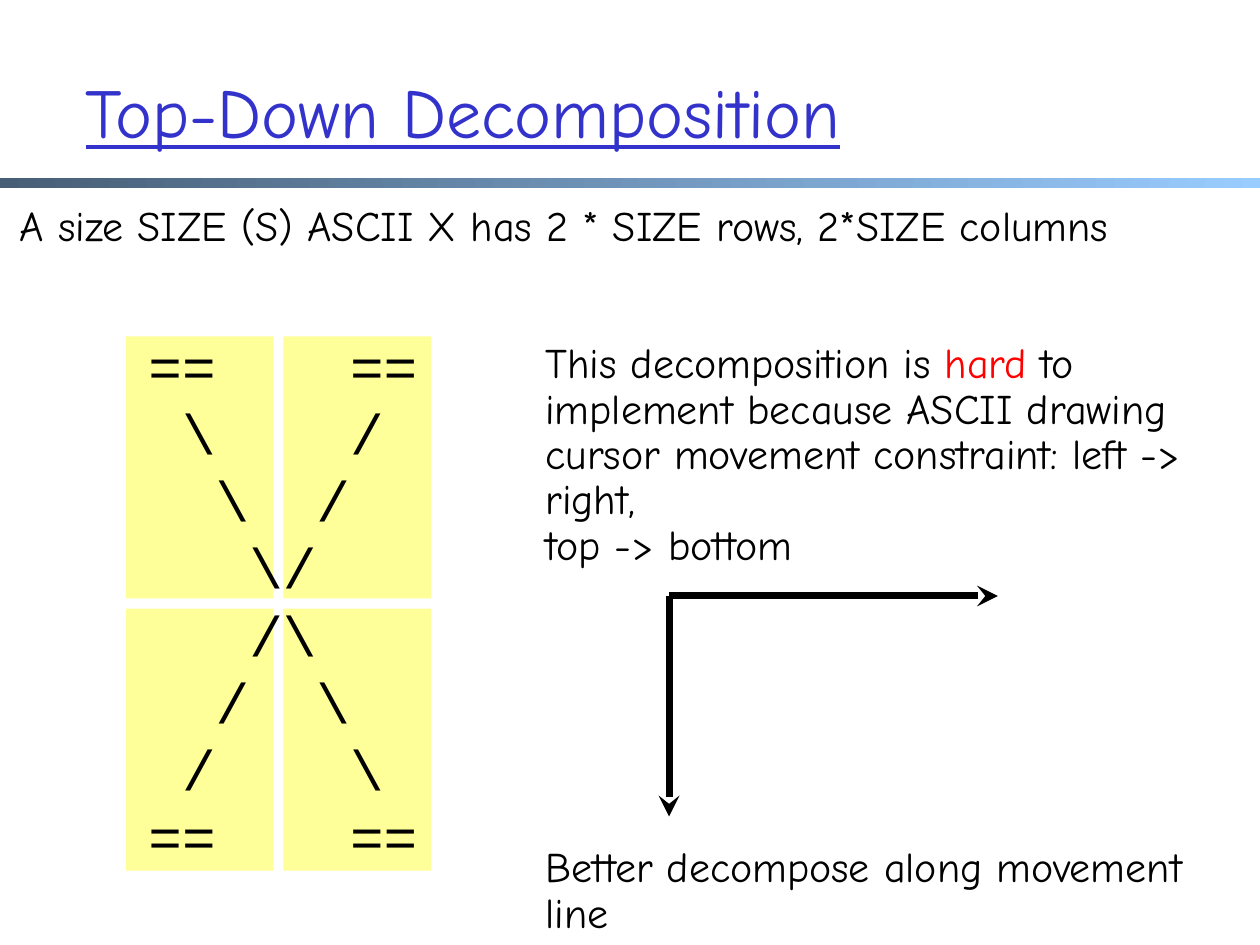
from dataclasses import dataclass
from lxml import etree
from pptx import Presentation
from pptx.dml.color import RGBColor
from pptx.enum import shapes, text
from pptx.oxml import ns
from pptx.util import Inches, Pt


@dataclass(frozen=True)
class Theme:
    sans: str = "Comic Neue"
    mono: str = "Courier New"
    ink: str = "000000"
    title: str = "3333CC"
    alert: str = "FF0000"
    tile: str = "FFFF99"
    bar: tuple = ("475E76", "99CCFF")
    head: int = 40
    art: int = 32
    body: int = 24
    line: int = 4


class Deck:
    def __init__(self, theme):
        self.theme = theme
        self.file = Presentation()
        self.file.slide_width = Inches(10)
        self.file.slide_height = Inches(7.5)
        self.slide = self.file.slides.add_slide(self.file.slide_layouts[5])

    def font(self, item, name, size, color):
        item.font.name = name
        item.font.size = Pt(size)
        item.font.color.rgb = RGBColor.from_string(color)

    def title(self, words, box):
        shape = self.slide.shapes.title
        shape.left, shape.top, shape.width, shape.height = map(Inches, box)
        frame = shape.text_frame
        frame.text = words
        frame.vertical_anchor = text.MSO_ANCHOR.MIDDLE
        para = frame.paragraphs[0]
        para.alignment = text.PP_ALIGN.LEFT
        self.font(para, self.theme.sans, self.theme.head, self.theme.title)
        para.font.underline = True

    def rect(self, box):
        shape = self.slide.shapes.add_shape(shapes.MSO_SHAPE.RECTANGLE, *map(Inches, box))
        shape.shadow.inherit = False
        shape.line.fill.background()
        return shape

    def bar(self, box):
        fill = self.rect(box).fill
        fill.gradient()
        fill.gradient_angle = 0
        for stop, color in zip(fill.gradient_stops, self.theme.bar):
            stop.color.rgb = RGBColor.from_string(color)

    def tile(self, box):
        fill = self.rect(box).fill
        fill.solid()
        fill.fore_color.rgb = RGBColor.from_string(self.theme.tile)

    def frame(self, box, wrap=True, group=None):
        place = (group or self.slide).shapes
        frame = place.add_textbox(*map(Inches, box)).text_frame
        frame.word_wrap = wrap
        frame.auto_size = text.MSO_AUTO_SIZE.SHAPE_TO_FIT_TEXT
        return frame

    def indent(self, para, left, first):
        props = para._p.get_or_add_pPr()
        props.set("marL", str(Inches(left)))
        props.set("indent", str(Inches(first)))

    def note(self, parts, box, wrap=True, group=None):
        para = self.frame(box, wrap, group).paragraphs[0]
        self.indent(para, 0.06, 0)
        para.line_spacing = 0.9
        para.space_before = Pt(self.theme.body * 0.2)
        self.font(para, self.theme.sans, self.theme.body, self.theme.ink)
        for words, color in parts:
            for row, line in enumerate(words.split("\n")):
                if row:
                    para.add_line_break()
                run = para.add_run()
                run.text = line
                if color:
                    run.font.color.rgb = RGBColor.from_string(color)

    def art(self, rows, box):
        frame = self.frame(box)
        frame.text = "\n".join(rows)
        for para in frame.paragraphs:
            self.indent(para, 0.38, -0.38)
            self.font(para, self.theme.mono, self.theme.art, self.theme.ink)

    def arrow(self, start, end, group):
        line = group.shapes.add_connector(
            shapes.MSO_CONNECTOR.STRAIGHT, *map(Inches, start + end))
        line.line.color.rgb = RGBColor.from_string(self.theme.ink)
        line.line.width = Pt(self.theme.line)
        stroke = line.line._get_or_add_ln()
        etree.SubElement(stroke, ns.qn("a:tailEnd"), type="stealth")
        etree.SubElement(line._element.spPr, ns.qn("a:effectLst"))


def main():
    theme = Theme()
    deck = Deck(theme)
    deck.bar((0, 1.41, 10, 0.08))
    for top in (2.67, 4.83):
        for left in (1, 2.25):
            deck.tile((left, top, 1.17, 2.08))
    deck.title("Top-Down Decomposition", (0.58, 0.25, 8.5, 1.25))

    half = 4
    upper = ["==    =="]
    lower = ["==    =="]
    for step in range(1, half):
        edge, gap = " " * step, " " * (2 * (half - 1 - step))
        upper.append(edge + "\\" + gap + "/")
        lower.append(edge + "/" + gap + "\\")
    deck.art(upper + lower[::-1], (1.08, 2.58, 2.75, 4.41))

    deck.note([("A size SIZE (S) ASCII X has 2 * SIZE rows, 2*SIZE columns", None)],
              (0, 1.58, 10.13, 0.46), wrap=False)
    group = deck.slide.shapes.add_group_shape()
    deck.note([
        ("This decomposition is ", None),
        ("hard", theme.alert),
        (" to implement because ASCII drawing cursor movement constraint: "
         "left -> right, \ntop -> bottom", None),
    ], (4.17, 2.67, 5.58, 1.92), group=group)
    for end in ((7.92, 4.73), (5.31, 6.48)):
        deck.arrow((5.31, 4.73), end, group)
    deck.note([("Better decompose along movement line", None)], (4.17, 6.67, 5.33, 0.83))
    deck.file.save("out.pptx")


if __name__ == "__main__":
    main()
